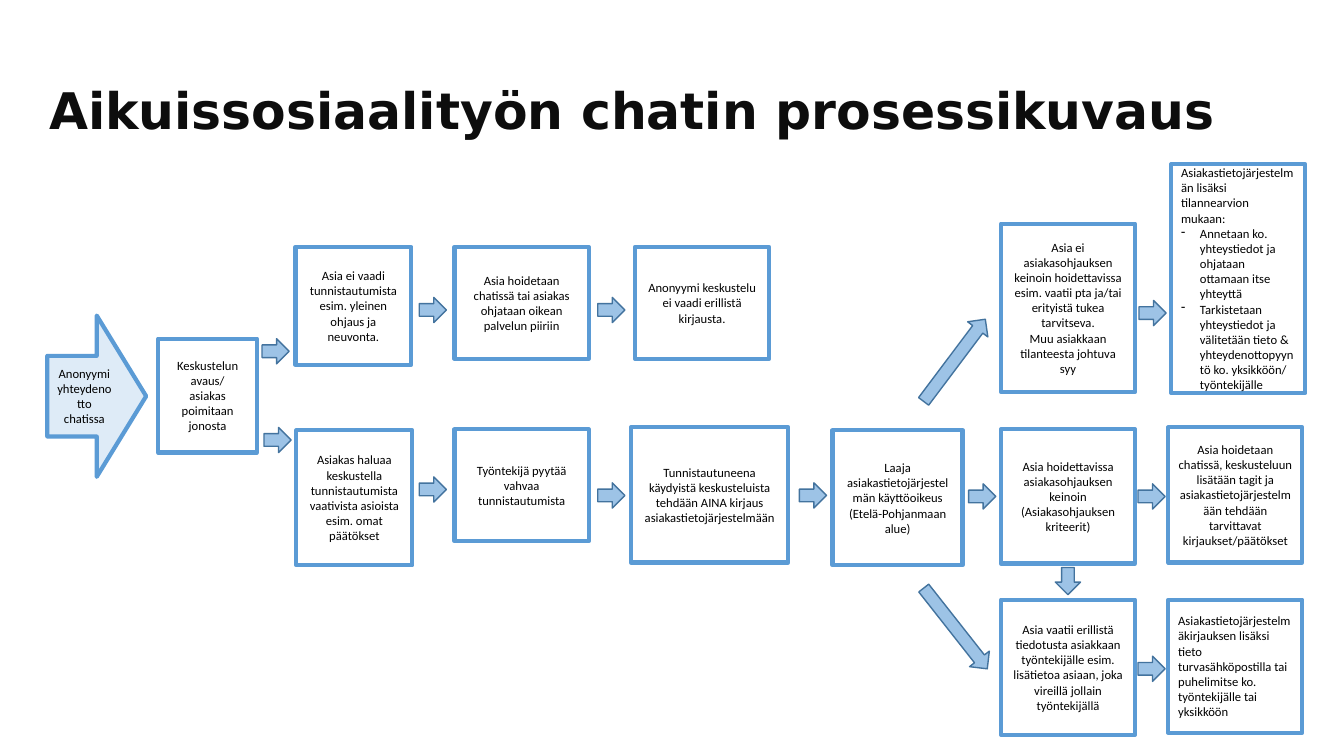
"""Build the process chart slide for the adult social work chat."""
from lxml import etree
from pptx import Presentation
from pptx.dml.color import RGBColor
from pptx.enum import shapes, text
from pptx.oxml import ns
from pptx.util import Pt

COLOURS = {"title": "0D0D0D", "text": "000000", "box": "FFFFFF", "start": "DEEBF7",
           "border": "5B9BD5", "arrow": "9DC3E6", "arrow border": "43739E"}
TITLE = "Aikuissosiaalityön chatin prosessikuvaus"
TITLE_AREA = (28.1, 28.8, 866.2, 104.4)
START = ((33.8, 225.4, 70.6, 115.2), ["Anonyymi yhteydenotto chatissa"])

CENTRED_BOXES = [
    ((113, 241.9, 70.6, 81.4), ["Keskustelun avaus/", "asiakas poimitaan jonosta"]),
    ((211, 176.4, 82.8, 84.2),
     ["Asia ei vaadi tunnistautumista esim. yleinen ohjaus ja neuvonta."]),
    ((324.7, 176.4, 95.8, 79.9),
     ["Asia hoidetaan chatissä tai asiakas ohjataan oikean palvelun piiriin"]),
    ((453.6, 176.4, 95.8, 79.9),
     ["Anonyymi keskustelu", "ei vaadi erillistä kirjausta."]),
    ((211.7, 307.4, 82.8, 96.5),
     ["Asiakas haluaa keskustella tunnistautumista vaativista asioista esim. omat päätökset"]),
    ((324.7, 306.7, 95.8, 79.9), ["Työntekijä pyytää vahvaa tunnistautumista"]),
    ((450.7, 305.3, 112.3, 96.5),
     ["Tunnistautuneena käydyistä keskusteluista tehdään AINA kirjaus asiakastietojärjestelmään"]),
    ((594.7, 307.4, 92.9, 96.5),
     ["Laaja asiakastietojärjestelmän käyttöoikeus (Etelä-Pohjanmaan alue)"]),
    ((715, 159.8, 95.8, 120.2),
     ["Asia ei asiakasohjauksen keinoin hoidettavissa esim. vaatii pta ja/tai "
      "erityistä tukea tarvitseva.", "Muu asiakkaan tilanteesta johtuva syy"]),
    ((715, 306.7, 95.8, 95.8),
     ["Asia hoidettavissa asiakasohjauksen keinoin (Asiakasohjauksen kriteerit)"]),
    ((715, 428.4, 95.8, 96.5),
     ["Asia vaatii erillistä tiedotusta asiakkaan työntekijälle esim. lisätietoa asiaan, "
      "joka vireillä jollain työntekijällä"]),
    ((834.5, 305.3, 95.8, 96.5),
     ["Asia hoidetaan chatissä, keskusteluun lisätään tagit ja asiakastietojärjestelmään "
      "tehdään tarvittavat kirjaukset/päätökset"]),
]
LEFT_BOXES = [
    ((834.5, 428.4, 95.8, 95),
     ["Asiakastietojärjestelmäkirjauksen lisäksi tieto turvasähköpostilla tai puhelimitse "
      "ko. työntekijälle tai yksikköön"], []),
    ((836.6, 117.4, 95.8, 163.4),
     ["Asiakastietojärjestelmän lisäksi tilannearvion mukaan:"],
     ["Annetaan ko. yhteystiedot ja ohjataan ottamaan itse yhteyttä",
      "Tarkistetaan yhteystiedot ja välitetään tieto & yhteydenottopyyntö "
      "ko. yksikköön/ työntekijälle"]),
]
ARROW_LENGTH, LONG_ARROW_LENGTH, ARROW_HEIGHT = 19.4, 73.4, 18
STEP_ARROWS = [(187.2, 241.9), (188.6, 305.3), (299.5, 340.6), (299.5, 212.4),
               (427, 212.4), (427, 344.9), (571, 344.9), (691.9, 345.6),
               (812.9, 345.6), (812.9, 468.7), (813.6, 214.6)]
TURNED_ARROWS = [(753.1, 406.1, ARROW_LENGTH, 90),
                 (645.1, 248.4, LONG_ARROW_LENGTH, 306.9),
                 (645.8, 439.9, LONG_ARROW_LENGTH, 51.8)]
BULLET_INDENT = 13.5


def colour(name):
    return RGBColor.from_string(COLOURS[name])


def add_run(paragraph, words, size, font, colour_name, bold=False):
    run = paragraph.add_run()
    run.text = words
    run.font.size, run.font.name, run.font.bold = Pt(size), font, bold
    run.font.color.rgb = colour(colour_name)


def add_bullet(paragraph):
    properties = paragraph._p.get_or_add_pPr()
    properties.set("marL", str(Pt(BULLET_INDENT)))
    properties.set("indent", str(-Pt(BULLET_INDENT)))
    etree.SubElement(properties, ns.qn("a:buChar")).set("char", "-")


def add_figure(slide, kind, area, fill, border, width):
    shape = slide.shapes.add_shape(kind, *map(Pt, area))
    shape.shadow.inherit = False
    shape.fill.solid()
    shape.fill.fore_color.rgb = colour(fill)
    shape.line.color.rgb = colour(border)
    shape.line.width = Pt(width)
    return shape


def add_step(slide, kind, area, fill, lines, alignment, bullets=()):
    frame = add_figure(slide, kind, area, fill, "border", 3).text_frame
    frame.word_wrap = True
    frame.vertical_anchor = text.MSO_ANCHOR.MIDDLE
    for index, words in enumerate([*lines, *bullets]):
        paragraph = frame.add_paragraph() if index else frame.paragraphs[0]
        paragraph.alignment = alignment
        if index >= len(lines):
            add_bullet(paragraph)
        add_run(paragraph, words, 9, "Calibri", "text")


def add_title(slide):
    frame = slide.shapes.add_textbox(*map(Pt, TITLE_AREA)).text_frame
    frame.word_wrap = True
    frame.vertical_anchor = text.MSO_ANCHOR.MIDDLE
    paragraph = frame.paragraphs[0]
    paragraph.line_spacing = 0.9
    add_run(paragraph, TITLE, 36, "DejaVu Sans", "title", True)


def main():
    presentation = Presentation()
    presentation.slide_width, presentation.slide_height = Pt(960), Pt(540)
    slide = presentation.slides.add_slide(presentation.slide_layouts[6])
    kinds, align = shapes.MSO_SHAPE, text.PP_ALIGN
    add_title(slide)
    area, lines = START
    add_step(slide, kinds.RIGHT_ARROW, area, "start", lines, align.CENTER)
    for area, lines in CENTRED_BOXES:
        add_step(slide, kinds.RECTANGLE, area, "box", lines, align.CENTER)
    for area, lines, bullets in LEFT_BOXES:
        add_step(slide, kinds.RECTANGLE, area, "box", lines, align.LEFT, bullets)
    level_arrows = [(left, top, ARROW_LENGTH, 0) for left, top in STEP_ARROWS]
    for left, top, length, angle in level_arrows + TURNED_ARROWS:
        arrow = add_figure(slide, kinds.RIGHT_ARROW, (left, top, length, ARROW_HEIGHT),
                           "arrow", "arrow border", 1)
        arrow.rotation = angle
    presentation.save("out.pptx")


if __name__ == "__main__":
    main()
